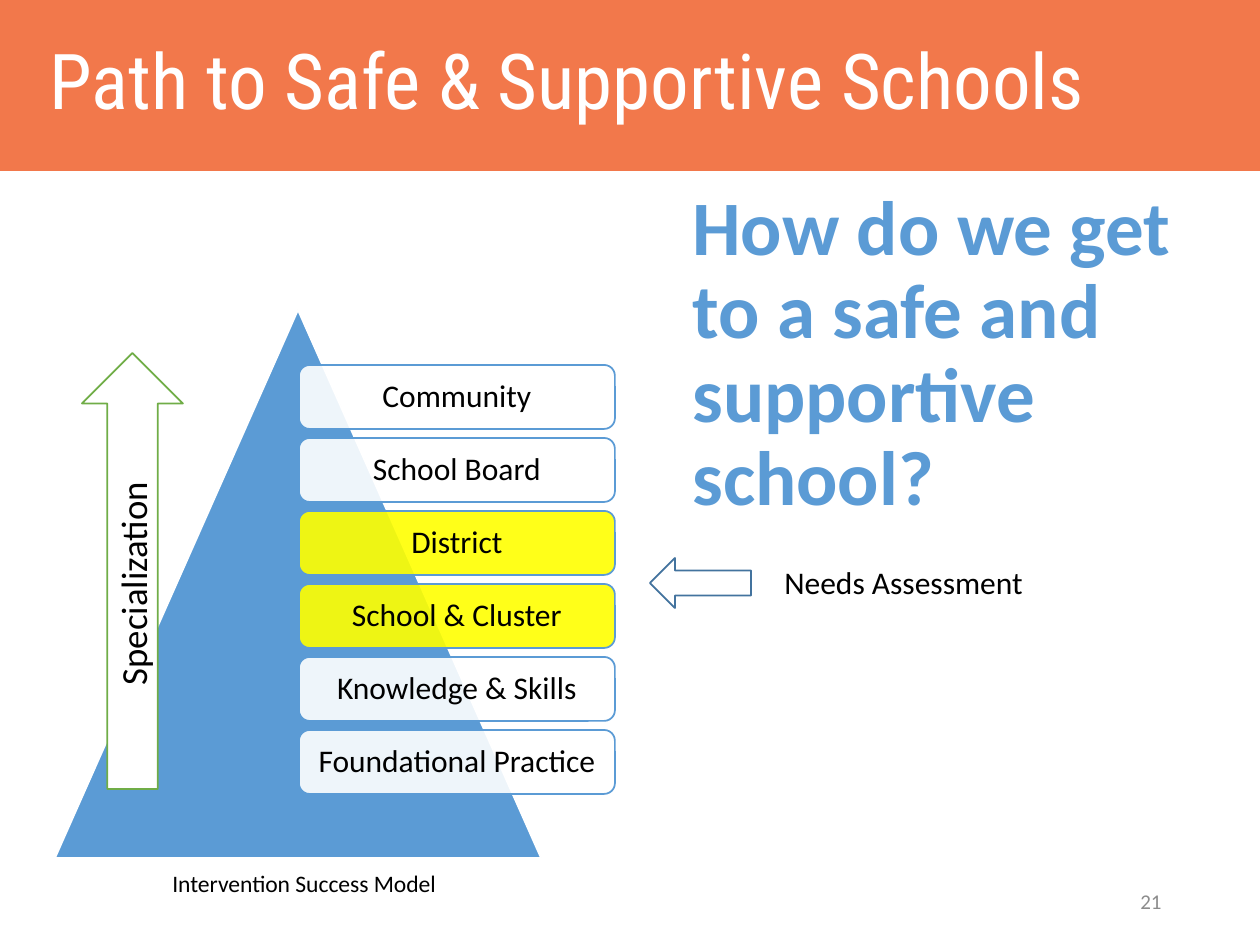
import pptx
import pptx.util
import pptx.dml.color
import pptx.enum.shapes
import pptx.enum.text
import pptx.oxml.ns
import lxml.etree

SHAPE = pptx.enum.shapes.MSO_SHAPE
ALIGN = pptx.enum.text.PP_ALIGN
ANCHOR = pptx.enum.text.MSO_ANCHOR
FIT = pptx.enum.text.MSO_AUTO_SIZE
PX = 914400 / 126  # EMU in one px

BLUE = "5B9BD5"
ORANGE = "F2784B"
WHITE = "FFFFFF"
YELLOW = "FFFF00"
BLACK = "000000"

deck = pptx.Presentation()
deck.slide_width = round(1260 * PX)
deck.slide_height = round(945 * PX)
slide = deck.slides.add_slide(deck.slide_layouts[6])
rgb = pptx.dml.color.RGBColor.from_string


def add_block(kind, box, fill, line):
    block = slide.shapes.add_shape(kind, *[round(v * PX) for v in box])
    block.shadow.inherit = False
    if fill:
        block.fill.solid()
        block.fill.fore_color.rgb = rgb(fill)
    else:
        block.fill.background()
    block.line.color.rgb = rgb(line)
    block.line.width = pptx.util.Pt(1)
    return block


def write(text, size, color, box=None, shape=None, align=ALIGN.LEFT,
          anchor=ANCHOR.MIDDLE, font="Calibri", bold=False, spacing=1.0):
    if shape is None:
        shape = slide.shapes.add_textbox(*[round(v * PX) for v in box])
    frame = shape.text_frame
    frame.word_wrap = True
    frame.vertical_anchor = anchor
    paragraph = frame.paragraphs[0]
    paragraph.alignment = align
    paragraph.line_spacing = spacing
    run = paragraph.add_run()
    run.text = text
    run.font.name = font
    run.font.size = pptx.util.Pt(size)
    run.font.bold = bold
    run.font.color.rgb = rgb(color)
    return frame


# Question
write("How do we get to a safe and supportive school?", 44, BLUE,
      box=(680, 287, 549, 137), bold=True, spacing=0.9)

# Pyramid with its levels
add_block(SHAPE.ISOSCELES_TRIANGLE, (55, 310, 486, 548), BLUE, WHITE)
levels = [
    ("Community", WHITE),
    ("School Board", WHITE),
    ("District", YELLOW),
    ("School & Cluster", YELLOW),
    ("Knowledge & Skills", WHITE),
    ("Foundational Practice", WHITE),
]
for row, (level_name, level_fill) in enumerate(levels):
    level = add_block(SHAPE.ROUNDED_RECTANGLE, (299, 365 + 73 * row, 316, 64),
                      level_fill, BLUE)
    fill_color = level.element.spPr.find(pptx.oxml.ns.qn("a:solidFill"))[0]
    lxml.etree.SubElement(fill_color, pptx.oxml.ns.qn("a:alpha"), val="90000")
    label = write(level_name, 18, BLACK, shape=level, align=ALIGN.CENTER, spacing=0.9)
    label.margin_left = label.margin_right = round(9 * PX)
    label.margin_top = label.margin_bottom = round(9 * PX)

# Specialization arrow, text reading upwards
specialization = add_block(SHAPE.UP_ARROW, (82, 353, 101, 436), WHITE, "70AD47")
write("Specialization", 21, BLACK, shape=specialization, align=ALIGN.CENTER)
specialization.element.txBody.find(pptx.oxml.ns.qn("a:bodyPr")).set("vert", "vert270")

# Needs assessment and caption
needs = write("Needs Assessment", 18, BLACK, box=(772, 557, 328, 50), anchor=ANCHOR.TOP)
needs.auto_size = FIT.SHAPE_TO_FIT_TEXT
add_block(SHAPE.LEFT_ARROW, (650, 558, 101, 50), None, "43739E")
caption = write("Intervention Success Model", 13.5, BLACK, box=(160, 863, 413, 42),
                anchor=ANCHOR.TOP)
caption.auto_size = FIT.SHAPE_TO_FIT_TEXT

# Header band
add_block(SHAPE.RECTANGLE, (0, 0, 1260, 170), ORANGE, ORANGE)
write("Path to Safe & Supportive Schools", 44, WHITE, box=(37, 0, 1168, 170),
      font="Roboto Condensed", spacing=0.9)

# Page number
write("21", 12, "8C8C8C", box=(890, 876, 284, 50), align=ALIGN.RIGHT)

deck.save("out.pptx")
